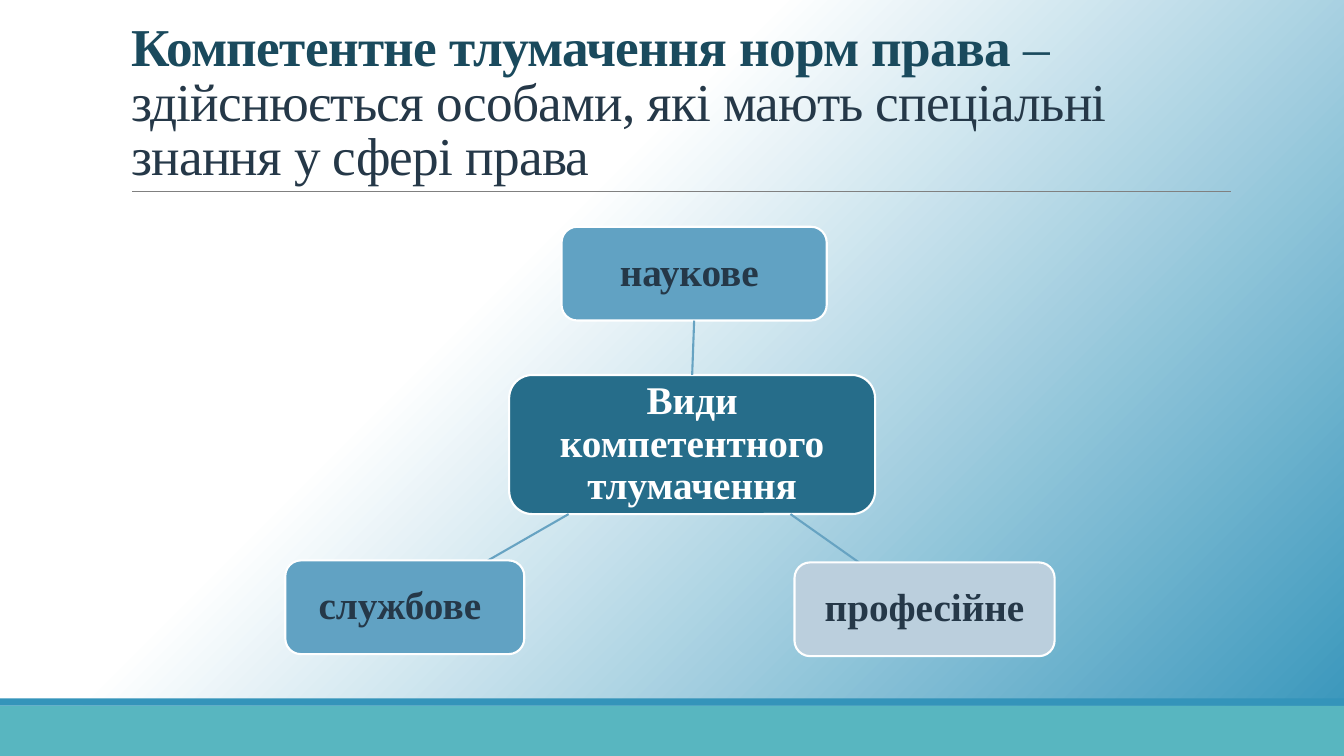
"""Build a slide on the kinds of competent interpretation of legal norms."""
from dataclasses import dataclass

import pptx
import pptx.dml.color
import pptx.enum.shapes
import pptx.enum.text
import pptx.oxml.ns
import pptx.util
from lxml import etree

Inches = pptx.util.Inches
Pt = pptx.util.Pt
SHAPES = pptx.enum.shapes.MSO_SHAPE
ANCHOR = pptx.enum.text.MSO_ANCHOR
ALIGN = pptx.enum.text.PP_ALIGN
FONT = "Times New Roman"
WHITE, BLUE, TEAL, DARK = "FFFFFF", "3494BA", "58B6C0", "253848"
LINK_BLUE, NODE_BLUE = "67A3C2", "61A2C3"
SLIDE_WIDTH = 13.33


@dataclass(frozen=True)
class Node:
    text: str
    left: float
    top: float
    width: float
    height: float
    fill: str
    ink: str = DARK


@dataclass(frozen=True)
class Bar:
    top: float
    height: float
    fill: str


@dataclass(frozen=True)
class Link:
    start: tuple[float, float]
    end: tuple[float, float]
    color: str = LINK_BLUE
    weight: float = 1.5


@dataclass(frozen=True)
class Span:
    text: str
    color: str
    bold: bool


HUB = Node("Види компетентного тлумачення", 5.05, 3.72, 3.63, 1.38, "266D8A", WHITE)
SCIENTIFIC = Node("наукове ", 5.57, 2.25, 2.63, 0.93, NODE_BLUE)
PROFESSIONAL = Node("професійне", 7.88, 5.58, 2.58, 0.93, "BBCFDD")
OFFICIAL = Node("службове ", 2.83, 5.56, 2.37, 0.93, NODE_BLUE)

BARS = [Bar(7, 0.5, TEAL), Bar(6.93, 0.07, BLUE)]
TITLE_RULE = Link((1.31, 1.9), (12.21, 1.9), "808080", 0.5)
LOWER_LINKS = [Link((7.84, 5.1), (8.52, 5.58)), Link((5.64, 5.1), (4.84, 5.56))]
TITLE = [
    Span("Компетентне тлумачення норм права ", "1A4A5D", True),
    Span("– ", "1A4A5D", False),
    Span("здійснюється особами, які мають спеціальні знання у сфері права", DARK, False),
]


def rgb(value: str) -> pptx.dml.color.RGBColor:
    return pptx.dml.color.RGBColor.from_string(value)


def format_run(run, size: float, color: str, bold: bool) -> None:
    run.font.name = FONT
    run.font.size = Pt(size)
    run.font.bold = bold
    run.font.color.rgb = rgb(color)


def paint_background(page) -> None:
    fill = page.background.fill
    fill.gradient()
    fill.gradient_angle = 315
    for stop, position, color in zip(fill.gradient_stops, (0.37, 1), (WHITE, BLUE)):
        stop.position = position
        stop.color.rgb = rgb(color)


def add_bar(page, bar: Bar) -> None:
    shape = page.shapes.add_shape(
        SHAPES.RECTANGLE, 0, Inches(bar.top), Inches(SLIDE_WIDTH), Inches(bar.height)
    )
    shape.shadow.inherit = False
    shape.fill.solid()
    shape.fill.fore_color.rgb = rgb(bar.fill)
    shape.line.fill.background()


def add_link(page, link: Link):
    points = [Inches(value) for value in (*link.start, *link.end)]
    connector = page.shapes.add_connector(
        pptx.enum.shapes.MSO_CONNECTOR.STRAIGHT, *points
    )
    connector.line.color.rgb = rgb(link.color)
    connector.line.width = Pt(link.weight)
    etree.SubElement(connector._element.spPr, pptx.oxml.ns.qn("a:effectLst"))
    return connector


def add_node(page, node: Node):
    box = page.shapes.add_shape(
        SHAPES.ROUNDED_RECTANGLE,
        Inches(node.left), Inches(node.top), Inches(node.width), Inches(node.height),
    )
    box.shadow.inherit = False
    box.fill.solid()
    box.fill.fore_color.rgb = rgb(node.fill)
    box.line.color.rgb = rgb(WHITE)
    box.line.width = Pt(1.5)
    frame = box.text_frame
    frame.word_wrap = True
    frame.vertical_anchor = ANCHOR.MIDDLE
    frame.margin_left = frame.margin_right = Inches(0.08)
    frame.margin_top = frame.margin_bottom = Inches(0.08)
    frame.text = node.text
    para = frame.paragraphs[0]
    para.alignment = ALIGN.CENTER
    para.line_spacing = 0.9
    format_run(para.runs[0], 28, node.ink, True)
    return box


def write_title(page) -> None:
    title = page.shapes.title
    title.left, title.top = Inches(1.2), Inches(0.31)
    title.width, title.height = Inches(11), Inches(1.59)
    frame = title.text_frame
    frame.word_wrap = True
    frame.auto_size = pptx.enum.text.MSO_AUTO_SIZE.NONE
    frame.vertical_anchor = ANCHOR.BOTTOM
    para = frame.paragraphs[0]
    para.alignment = ALIGN.LEFT
    para.line_spacing = 0.85
    for span in TITLE:
        run = para.add_run()
        run.text = span.text
        format_run(run, 38, span.color, span.bold)
        run._r.get_or_add_rPr().set("spc", "-50")


def main() -> None:
    deck = pptx.Presentation()
    deck.slide_width, deck.slide_height = Inches(SLIDE_WIDTH), Inches(7.5)
    page = deck.slides.add_slide(deck.slide_layouts[5])
    paint_background(page)
    for bar in BARS:
        add_bar(page, bar)
    add_link(page, TITLE_RULE)
    write_title(page)
    hub = add_node(page, HUB)
    scientific = add_node(page, SCIENTIFIC)
    upper_link = add_link(page, Link((6.87, 3.72), (6.88, 3.18)))
    upper_link.begin_connect(hub, 0)
    upper_link.end_connect(scientific, 2)
    for link in LOWER_LINKS:
        add_link(page, link)
    for node in (PROFESSIONAL, OFFICIAL):
        add_node(page, node)
    deck.save("out.pptx")


if __name__ == "__main__":
    main()
